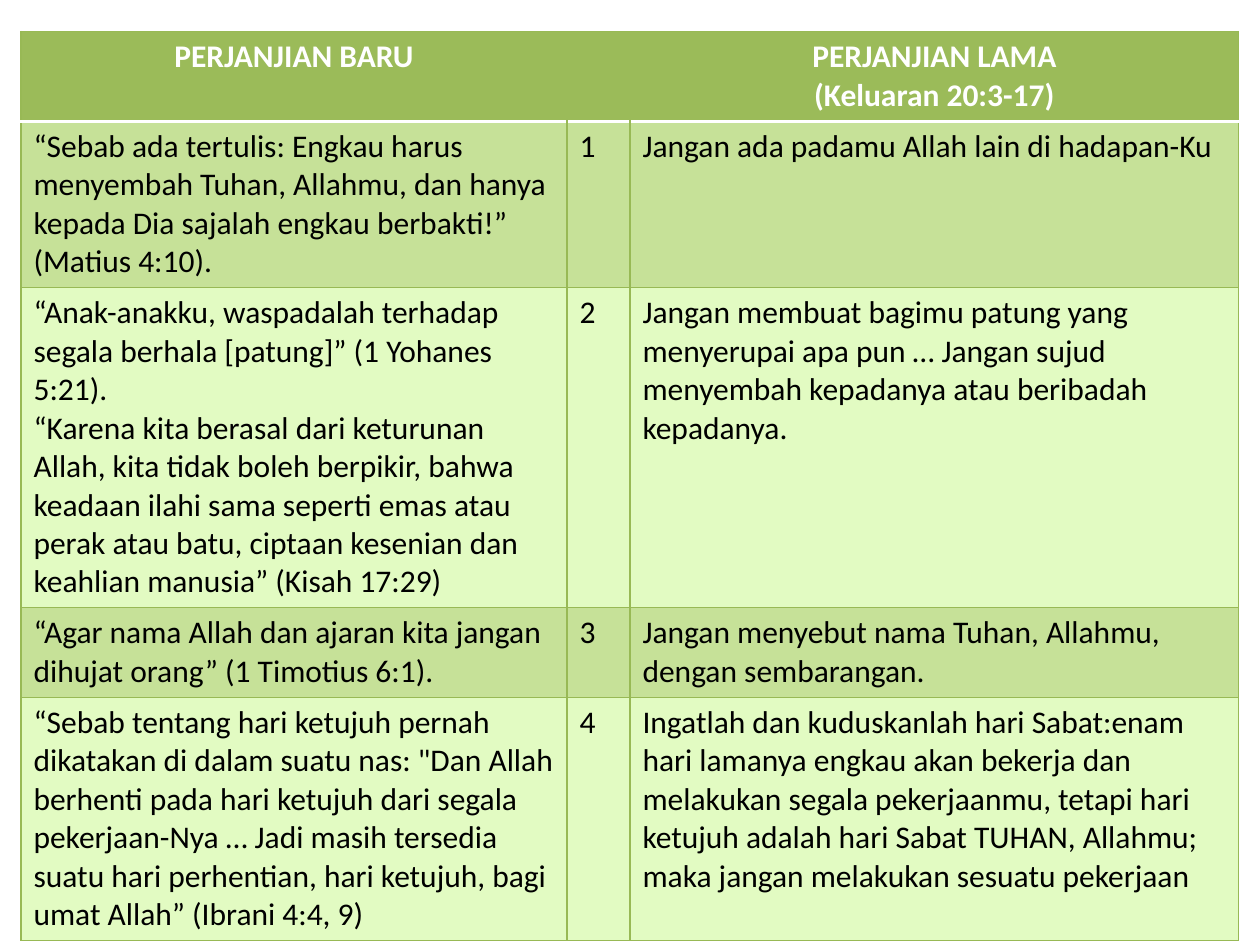
from lxml import etree
from pptx import Presentation
from pptx.dml.color import RGBColor
from pptx.enum import text
from pptx.oxml import ns
from pptx.util import Pt

WHITE = RGBColor(0xFF, 0xFF, 0xFF)
BLACK = RGBColor(0, 0, 0)
HEADER = RGBColor(0x9B, 0xBB, 0x59)
BAND = RGBColor(0xC6, 0xE1, 0x98)
PLAIN = RGBColor(0xE2, 0xFB, 0xC2)
BORDER = RGBColor(0x98, 0xB9, 0x55)

COLUMN_WIDTHS = (312, 36, 348)
ROW_HEIGHT = 29.2

ROWS = [
    ("PERJANJIAN BARU", "", "PERJANJIAN LAMA\n(Keluaran 20:3-17)"),
    ("“Sebab ada tertulis: Engkau harus menyembah Tuhan, Allahmu, dan hanya "
     "kepada Dia sajalah engkau berbakti!” (Matius 4:10).",
     "1",
     "Jangan ada padamu Allah lain di hadapan-Ku"),
    ("“Anak-anakku, waspadalah terhadap segala berhala [patung]” (1 Yohanes 5:21).\n"
     "“Karena kita berasal dari keturunan Allah, kita tidak boleh berpikir, bahwa "
     "keadaan ilahi sama seperti emas atau perak atau batu, ciptaan kesenian dan "
     "keahlian manusia” (Kisah 17:29)",
     "2",
     "Jangan membuat bagimu patung yang menyerupai apa pun … Jangan sujud "
     "menyembah kepadanya atau beribadah kepadanya."),
    ("“Agar nama Allah dan ajaran kita jangan dihujat orang” (1 Timotius 6:1).",
     "3",
     "Jangan menyebut nama Tuhan, Allahmu, dengan sembarangan."),
    ("“Sebab tentang hari ketujuh pernah dikatakan di dalam suatu nas: \"Dan Allah "
     "berhenti pada hari ketujuh dari segala pekerjaan-Nya … Jadi masih tersedia "
     "suatu hari perhentian, hari ketujuh, bagi umat Allah” (Ibrani 4:4, 9)",
     "4",
     "Ingatlah dan kuduskanlah hari Sabat:enam hari lamanya engkau akan bekerja "
     "dan melakukan segala pekerjaanmu, tetapi hari ketujuh adalah hari Sabat "
     "TUHAN, Allahmu; maka jangan melakukan sesuatu pekerjaan"),
]


def set_borders(cell, row, col):
    tc_pr = cell._tc.get_or_add_tcPr()
    header = row == 0
    sides = {
        "lnL": None if header and col > 0 else (BORDER, 0.75),
        "lnR": None if header and col < 2 else (BORDER, 0.75),
        "lnT": (WHITE, 2) if row == 1 else (BORDER, 0.75),
        "lnB": (WHITE, 2) if header else (BORDER, 0.75),
    }
    for index, (tag, style) in enumerate(sides.items()):
        color, width = style or (None, 0)
        ln = etree.Element(ns.qn(f"a:{tag}"), w=str(Pt(width)))
        if style:
            fill = etree.SubElement(ln, ns.qn("a:solidFill"))
            etree.SubElement(fill, ns.qn("a:srgbClr"), val=str(color))
        else:
            etree.SubElement(ln, ns.qn("a:noFill"))
        tc_pr.insert(index, ln)


def fill_cell(cell, content, row, col):
    header = row == 0
    cell.fill.solid()
    cell.fill.fore_color.rgb = HEADER if header else (BAND if row % 2 else PLAIN)
    set_borders(cell, row, col)
    cell.text_frame.text = content
    for p in cell.text_frame.paragraphs:
        p.alignment = text.PP_ALIGN.CENTER if header else text.PP_ALIGN.LEFT
        p.font.size = Pt(18)
        for r in p.runs:
            r.font.name = "Calibri"
            r.font.size = Pt(18)
            r.font.bold = header
            r.font.color.rgb = WHITE if header else BLACK


def add_commandments_table(s, left, top, width, height):
    frame = s.shapes.add_table(len(ROWS), len(COLUMN_WIDTHS),
                               Pt(left), Pt(top), Pt(width), Pt(height))
    table = frame.table
    for column, column_width in zip(table.columns, COLUMN_WIDTHS):
        column.width = Pt(column_width)
    for row, contents in enumerate(ROWS):
        table.rows[row].height = Pt(ROW_HEIGHT)
        for col, content in enumerate(contents):
            fill_cell(table.cell(row, col), content, row, col)
    frame.height = Pt(height)


def main():
    prs = Presentation()
    prs.slide_width, prs.slide_height = Pt(720), Pt(540)
    s = prs.slides.add_slide(prs.slide_layouts[6])
    add_commandments_table(s, 12, 18, sum(COLUMN_WIDTHS), 511.2)
    prs.save("out.pptx")


if __name__ == "__main__":
    main()
